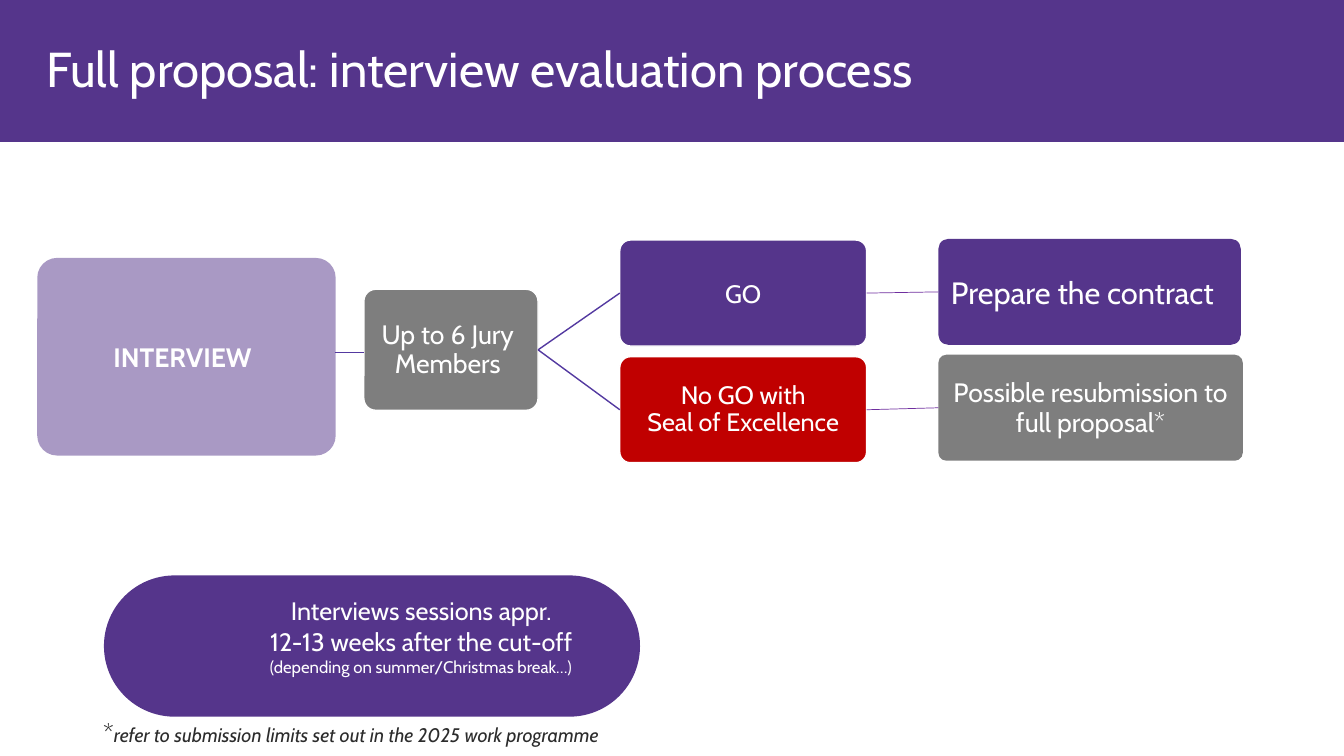
from lxml import etree
from pptx import Presentation
from pptx.dml.color import RGBColor
from pptx.enum.shapes import MSO_CONNECTOR, MSO_SHAPE
from pptx.enum.text import MSO_ANCHOR, PP_ALIGN
from pptx.oxml.ns import qn
from pptx.util import Cm, Pt

ROUNDED = MSO_SHAPE.ROUNDED_RECTANGLE
RECTANGLE = MSO_SHAPE.RECTANGLE
STRAIGHT = MSO_CONNECTOR.STRAIGHT
LEFT, CENTER = PP_ALIGN.LEFT, PP_ALIGN.CENTER
LEFT_SIDE, RIGHT_SIDE = 1, 3

FONT = "Cabin"
PURPLE, GREY, RED, WHITE, INK = "55358B", "7E7E7E", "C00000", "FFFFFF", "2C2C2C"
BRANCH, LINK = "5339A0", "6F2F9F"

# Content: a paragraph is a list of runs (text, size, style); lengths in cm
TITLE = [[("Full proposal: interview evaluation process", 35, "")]]
FOOTNOTE = [[("*", 18, ""),
             ("refer to submission limits set out in the 2025 work programme", 14, "i")]]
# name: (left, top, width, height), corner radius, fill, outlined, text shift, line pitch, text
BOXES = {
    "session": ((2.62, 14.5, 13.51, 3.56), 1.78, PURPLE, False, (1.24, -0.25), None,
                [[("Interviews sessions appr.", 18, "")],
                 [("12-13 weeks after the cut-off", 18, "")],
                 [("(depending on summer/Christmas break…)", 12, "")]]),
    "interview": ((0.94, 6.5, 7.52, 4.98), 0.5, PURPLE, False, (-0.1, 0), None,
                  [[("INTERVIEW", 19, "b")]]),
    "jury": ((9.17, 7.29, 4.39, 3.05), 0.3, GREY, True, (-0.08, 0), 20.5,
             [[("Up to 6 Jury\nMembers", 19, "")]]),
    "go": ((15.62, 6.05, 6.22, 2.67), 0.27, PURPLE, True, (0, 0), None,
           [[("GO", 18, "")]]),
    "contract": ((23.65, 6.02, 7.62, 2.67), 0.25, PURPLE, False, (-0.18, 0), None,
                 [[("Prepare the contract", 22, "")]]),
    "no go": ((15.62, 8.99, 6.22, 2.67), 0.27, RED, True, (0, 0), 19.4,
              [[("No GO with\nSeal of Excellence", 18, "")]]),
    "resubmission": ((23.65, 8.94, 7.67, 2.67), 0.2, GREY, False, (0, 0), 21.6,
                     [[("Possible resubmission to", 19, "")],
                      [("full proposal*", 19, "")]]),
}
JOINS = [("jury", "go", BRANCH, 1), ("jury", "no go", BRANCH, 1),
         ("go", "contract", LINK, 0.5), ("no go", "resubmission", LINK, 0.5)]


def color(value):
    return RGBColor.from_string(value)


def write(frame, paragraphs, text_color, align, pitch=None):
    frame.word_wrap = True
    for index, runs in enumerate(paragraphs):
        paragraph = frame.paragraphs[0] if index == 0 else frame.add_paragraph()
        paragraph.alignment = align
        if pitch:
            paragraph.line_spacing = Pt(pitch)
        for text, size, style in runs:
            for number, line in enumerate(text.split("\n")):
                if number:
                    paragraph.add_line_break()
                run = paragraph.add_run()
                run.text = line
                run.font.name = FONT
                run.font.size = Pt(size)
                run.font.bold = style == "b"
                run.font.italic = style == "i"
                run.font.color.rgb = color(text_color)


def set_margins(frame, left=0, top=0, right=0, bottom=0):
    frame.margin_left, frame.margin_top = Cm(left), Cm(top)
    frame.margin_right, frame.margin_bottom = Cm(right), Cm(bottom)


def add_block(kind, place, fill):
    shape = slide.shapes.add_shape(kind, *map(Cm, place))
    shape.shadow.inherit = False
    shape.fill.solid()
    shape.fill.fore_color.rgb = color(fill)
    shape.line.fill.background()
    return shape


def add_box(place, radius, fill, outlined, shift, pitch, paragraphs):
    shape = add_block(ROUNDED, place, fill)
    shape.adjustments[0] = radius / min(place[2:])
    if outlined:
        shape.line.color.rgb = color(WHITE)
        shape.line.width = Pt(1)
    frame = shape.text_frame
    frame.vertical_anchor = MSO_ANCHOR.MIDDLE
    # An inset of twice the shift moves centred text by the shift
    across, down = shift
    set_margins(frame, max(0, 2 * across), max(0, 2 * down),
                max(0, -2 * across), max(0, -2 * down))
    write(frame, paragraphs, WHITE, CENTER, pitch)
    return shape


def add_text(place, paragraphs, text_color):
    frame = slide.shapes.add_textbox(*map(Cm, place)).text_frame
    set_margins(frame)
    write(frame, paragraphs, text_color, LEFT)


def add_line(start, end, line_color, width):
    line = slide.shapes.add_connector(STRAIGHT, *map(Cm, start + end))
    line.line.color.rgb = color(line_color)
    line.line.width = Pt(width)
    etree.SubElement(line._element.spPr, qn("a:effectLst"))
    return line


presentation = Presentation()
presentation.slide_width, presentation.slide_height = Cm(33.87), Cm(19.05)
slide = presentation.slides.add_slide(presentation.slide_layouts[6])

# Title band
add_block(RECTANGLE, (0, 0, 33.87, 3.58), PURPLE)
add_text((1.17, 0.97, 25.4, 1.6), TITLE, WHITE)

# Boxes
boxes = {name: add_box(*details) for name, details in BOXES.items()}
solid_fill = boxes["interview"].fill._xPr.find(qn("a:solidFill"))
etree.SubElement(solid_fill[0], qn("a:alpha"), val="50000")

# Lines
add_line((8.43, 8.89), (9.17, 8.89), BRANCH, 1)
for source, target, line_color, width in JOINS:
    joint = add_line((0, 0), (1, 1), line_color, width)
    joint.begin_connect(boxes[source], RIGHT_SIDE)
    joint.end_connect(boxes[target], LEFT_SIDE)

# Footnote
add_text((2.6, 18.08, 13.6, 0.84), FOOTNOTE, INK)

presentation.save("out.pptx")
